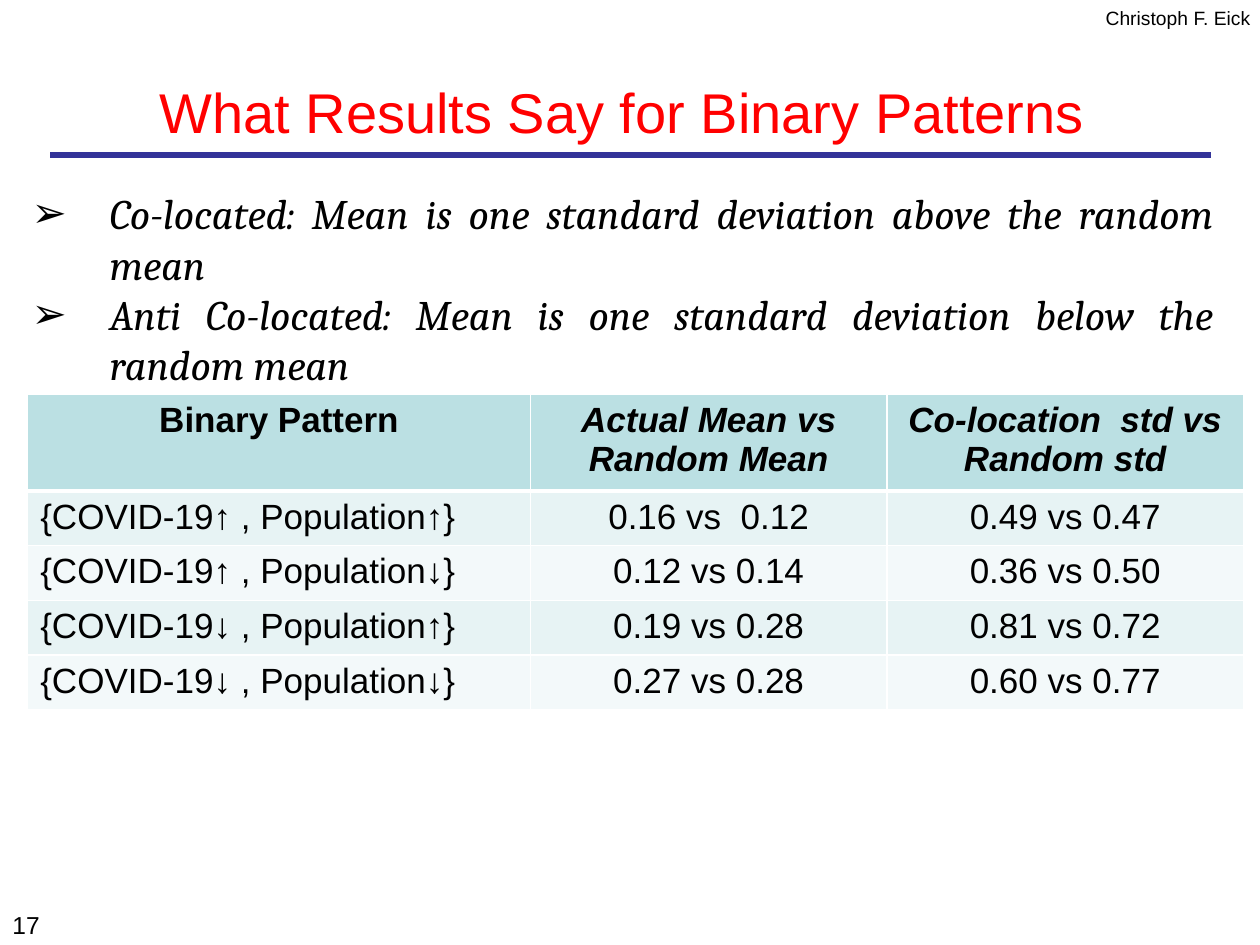
from lxml import etree
from pptx import Presentation
from pptx.dml.color import RGBColor
from pptx.enum.shapes import MSO_CONNECTOR
from pptx.enum.text import MSO_ANCHOR, MSO_AUTO_SIZE, PP_ALIGN
from pptx.oxml.ns import qn
from pptx.util import Inches, Pt

LEFT, CENTER, JUSTIFY = PP_ALIGN.LEFT, PP_ALIGN.CENTER, PP_ALIGN.JUSTIFY
STRAIGHT = MSO_CONNECTOR.STRAIGHT
MIDDLE = MSO_ANCHOR.MIDDLE
NO_AUTOFIT = MSO_AUTO_SIZE.NONE
TITLE_AND_CONTENT = 1

COLORS = {
    "text": "000000",
    "title": "FF0000",
    "rule": "333399",
    "header": "BBE0E3",
    "odd_row": "E7F3F4",
    "even_row": "F3F9FA",
    "border": "FFFFFF",
}

DEFINITIONS = [
    "Co-located: Mean is one standard deviation above the random mean",
    "Anti Co-located: Mean is one standard deviation below the random mean",
]
HEADERS = ["Binary Pattern", "Actual Mean vs Random Mean", "Co-location  std vs Random std"]
RESULTS = [
    ["{COVID-19↑ , Population↑}", "0.16 vs  0.12", "0.49 vs 0.47"],
    ["{COVID-19↑ , Population↓}", "0.12 vs 0.14", "0.36 vs 0.50"],
    ["{COVID-19↓ , Population↑}", "0.19 vs 0.28", "0.81 vs 0.72"],
    ["{COVID-19↓ , Population↓}", "0.27 vs 0.28", "0.60 vs 0.77"],
]
COLUMN_WIDTHS = [3.99, 2.83, 2.83]
HEADER_HEIGHT, ROW_HEIGHT = 0.76, 0.43


def color(name):
    return RGBColor.from_string(COLORS[name])


def style(paragraph, size, align, font="Arial", fill="text", bold=False, italic=False):
    paragraph.alignment = align
    paragraph.font.name = font
    paragraph.font.size = Pt(size)
    paragraph.font.bold = bold
    paragraph.font.italic = italic
    paragraph.font.color.rgb = color(fill)


def place(shape, left, top, width, height):
    shape.left, shape.top = Inches(left), Inches(top)
    shape.width, shape.height = Inches(width), Inches(height)


def add_label(slide, text, box, size, align, wrap):
    label = slide.shapes.add_textbox(*map(Inches, box))
    label.text_frame.word_wrap = wrap
    label.text_frame.text = text
    style(label.text_frame.paragraphs[0], size, align)


def add_rule(slide, left, right, y):
    rule = slide.shapes.add_connector(
        STRAIGHT, Inches(left), Inches(y), Inches(right), Inches(y))
    rule.line.color.rgb = color("rule")
    rule.line.width = Pt(3)
    etree.SubElement(rule._element.spPr, qn("a:effectLst"))


def fill_title(title, text):
    place(title, -0.12, 0.44, 10.12, 0.88)
    frame = title.text_frame
    frame.text = text
    frame.vertical_anchor = MIDDLE
    frame.auto_size = NO_AUTOFIT
    style(frame.paragraphs[0], 32, CENTER, fill="title")


def fill_definitions(body):
    place(body, 0.15, 1.44, 9.58, 1.72)
    frame = body.text_frame
    frame.text = "\n".join(DEFINITIONS)
    frame.auto_size = NO_AUTOFIT
    for definition in frame.paragraphs:
        properties = definition._p.get_or_add_pPr()
        properties.set("marL", str(Inches(0.62)))
        properties.set("indent", str(-Inches(0.62)))
        etree.SubElement(properties, qn("a:buChar"), char="➢")
        definition.space_before = Pt(0)
        style(definition, 24, JUSTIFY, font="Cambria", italic=True)


def set_borders(cell, bottom_width):
    properties = cell._tc.get_or_add_tcPr()
    for side, width in (("L", 1), ("R", 1), ("T", 1), ("B", bottom_width)):
        line = etree.SubElement(properties, qn(f"a:ln{side}"), w=str(Pt(width)))
        fill = etree.SubElement(line, qn("a:solidFill"))
        etree.SubElement(fill, qn("a:srgbClr"), val=COLORS["border"])


def fill_cell(cell, text, fill, align, bold=False, italic=False, bottom_width=1):
    set_borders(cell, bottom_width)
    cell.fill.solid()
    cell.fill.fore_color.rgb = color(fill)
    cell.text = text
    style(cell.text_frame.paragraphs[0], 20, align, bold=bold, italic=italic)


def add_results_table(slide):
    height = HEADER_HEIGHT + ROW_HEIGHT * len(RESULTS)
    table = slide.shapes.add_table(
        len(RESULTS) + 1, len(HEADERS), Inches(0.22), Inches(3.13),
        Inches(sum(COLUMN_WIDTHS)), Inches(height)).table
    for column, width in zip(table.columns, COLUMN_WIDTHS):
        column.width = Inches(width)

    # Header row
    table.rows[0].height = Inches(HEADER_HEIGHT)
    for c, heading in enumerate(HEADERS):
        fill_cell(table.cell(0, c), heading, "header", CENTER,
                  bold=True, italic=c > 0, bottom_width=3)

    # One row per binary pattern
    for r, result in enumerate(RESULTS, start=1):
        table.rows[r].height = Inches(ROW_HEIGHT)
        band = "odd_row" if r % 2 else "even_row"
        pattern_align = JUSTIFY if r <= 2 else LEFT
        for c, value in enumerate(result):
            fill_cell(table.cell(r, c), value, band, CENTER if c else pattern_align)


def main():
    prs = Presentation()
    prs.slide_width, prs.slide_height = Inches(10), Inches(7.5)
    slide = prs.slides.add_slide(prs.slide_layouts[TITLE_AND_CONTENT])

    # Page furniture: rule, author and page number
    add_rule(slide, 0.4, 9.61, 1.23)
    add_label(slide, "Christoph F. Eick", (8.66, 0, 1.38, 0.29), 11, CENTER, wrap=False)
    add_label(slide, "17", (0, 7.17, 0.48, 0.31), 14, LEFT, wrap=True)

    # Content
    fill_title(slide.shapes.title, "What Results Say for Binary Patterns")
    fill_definitions(slide.placeholders[1])
    add_results_table(slide)

    prs.save("out.pptx")


if __name__ == "__main__":
    main()
